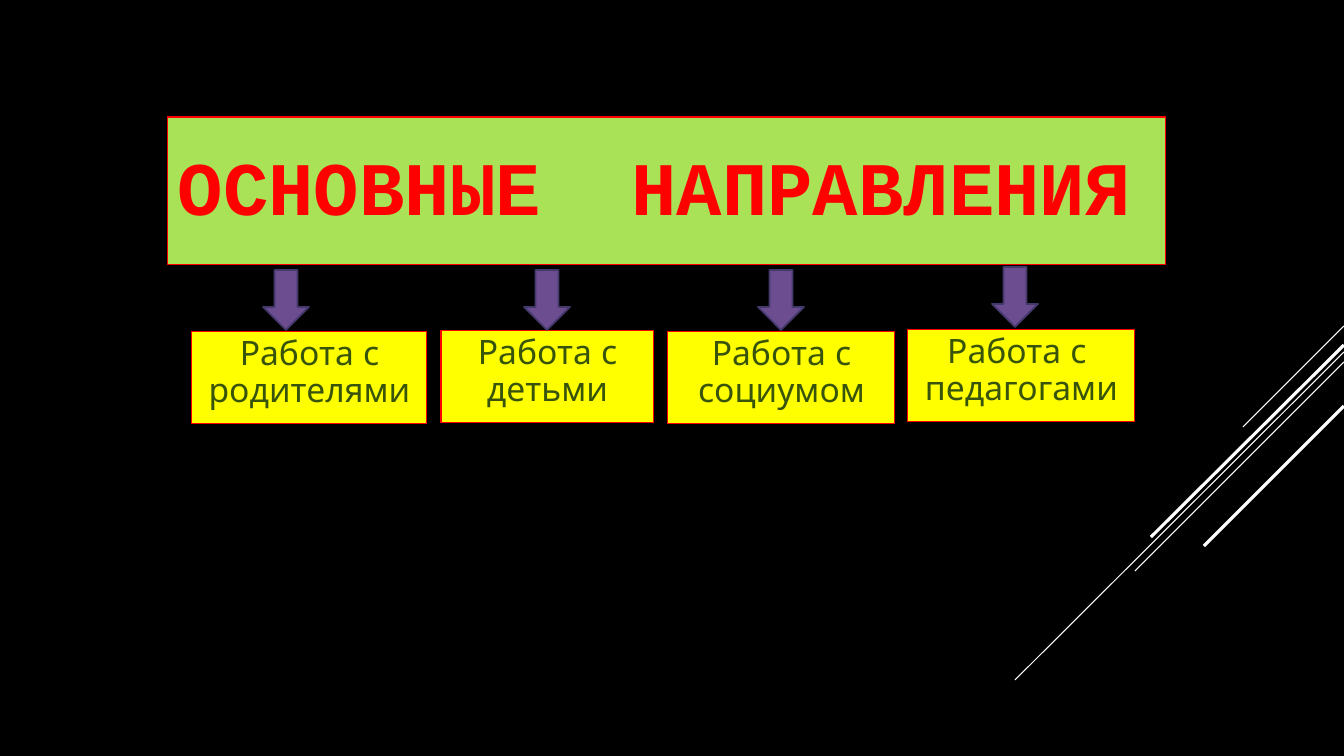
from dataclasses import dataclass

from lxml import etree
from pptx import Presentation
from pptx import util as u
from pptx.dml.color import RGBColor
from pptx.enum import shapes, text
from pptx.oxml.ns import qn


@dataclass(frozen=True)
class Theme:
    """Colours, fonts and type sizes of the slide."""
    back: str = "000000"
    ray: str = "FFFFFF"
    banner: str = "A9E257"
    red: str = "FF0000"
    card: str = "FFFF00"
    ink: str = "38540A"
    arrow: str = "6C4D90"
    edge: str = "43396B"
    head: str = "Courier New"
    body: str = "Quicksand"
    big: int = 54
    small: int = 24


T = Theme()
WIDE, HIGH = 1344, 756
SCALE = 12192000 / WIDE
RAYS = [
    (326, 1243, 427, 0.75),
    (352, 1015, 680, 0.75),
    (362, 1135, 571, 0.75),
    (345, 1151, 537, 2.25),
    (406, 1204, 546, 2.25),
]
CARDS = [
    (192, 332, 235, ["Работа с родителями"]),
    (441, 331, 213, ["Работа с детьми"]),
    (668, 332, 227, ["Работа с социумом"]),
    (908, 330, 227, ["Работа с ", "педагогами"]),
]
ARROWS = [(263, 270), (524, 270), (758, 270), (992, 267)]


def px(n):
    """Turn pixels into EMU."""
    return u.Emu(round(n * SCALE))


def rgb(code):
    """Make a colour from its hex code."""
    return RGBColor.from_string(code)


def add_ray(slide, top, x, y, width):
    """Draw a slanted line from the right edge of the slide."""
    ray = slide.shapes.add_connector(
        shapes.MSO_CONNECTOR.STRAIGHT, px(WIDE), px(top), px(x), px(y))
    ray.line.color.rgb = rgb(T.ray)
    ray.line.width = u.Pt(width)
    etree.SubElement(ray._element.spPr, qn("a:effectLst"))


def add_form(slide, kind, at, fill, line, width):
    """Draw a filled preset shape with an outline."""
    form = slide.shapes.add_shape(kind, *[px(n) for n in at])
    form.shadow.inherit = False
    form.fill.solid()
    form.fill.fore_color.rgb = rgb(fill)
    form.line.color.rgb = rgb(line)
    form.line.width = u.Pt(width)
    return form


def add_run(para, words, face, size, color, bold=False):
    """Add one styled run to a paragraph."""
    run = para.add_run()
    run.text = words
    run.font.name = face
    run.font.size = u.Pt(size)
    run.font.color.rgb = rgb(color)
    run.font.bold = bold
    return run


def add_title(slide):
    """Draw the banner with the heading, its word gap two letters wide."""
    box = add_form(slide, shapes.MSO_SHAPE.RECTANGLE, (168, 117, 998, 148),
                   T.banner, T.red, 0.75)
    frame = box.text_frame
    frame.word_wrap = True
    frame.vertical_anchor = text.MSO_ANCHOR.MIDDLE
    para = frame.paragraphs[0]
    para.alignment = text.PP_ALIGN.LEFT
    para.line_spacing = 0.9
    style = (T.head, T.big, T.red, True)
    add_run(para, "ОСНОВНЫЕ", *style)
    gap = add_run(para, " ", *style)
    gap.font._element.set("spc", str(T.big * 60))
    add_run(para, "НАПРАВЛЕНИЯ", *style)


def add_card(slide, x, y, width, lines):
    """Draw a card with centred lines of text."""
    box = add_form(slide, shapes.MSO_SHAPE.RECTANGLE, (x, y, width, 92),
                   T.card, T.red, 0.75)
    frame = box.text_frame
    frame.word_wrap = len(lines) == 1
    frame.vertical_anchor = text.MSO_ANCHOR.TOP
    for i, words in enumerate(lines):
        para = frame.add_paragraph() if i else frame.paragraphs[0]
        para.alignment = text.PP_ALIGN.CENTER
        para.line_spacing = 0.9
        add_run(para, words, T.body, T.small, T.ink)


def main():
    """Build the slide and save it."""
    deck = Presentation()
    deck.slide_width, deck.slide_height = px(WIDE), px(HIGH)
    slide = deck.slides.add_slide(deck.slide_layouts[6])
    slide.background.fill.solid()
    slide.background.fill.fore_color.rgb = rgb(T.back)
    for ray in RAYS:
        add_ray(slide, *ray)
    add_title(slide)
    for card in CARDS:
        add_card(slide, *card)
    for x, y in ARROWS:
        add_form(slide, shapes.MSO_SHAPE.DOWN_ARROW, (x, y, 46, 60),
                 T.arrow, T.edge, 1.25)
    deck.save("out.pptx")


if __name__ == "__main__":
    main()
